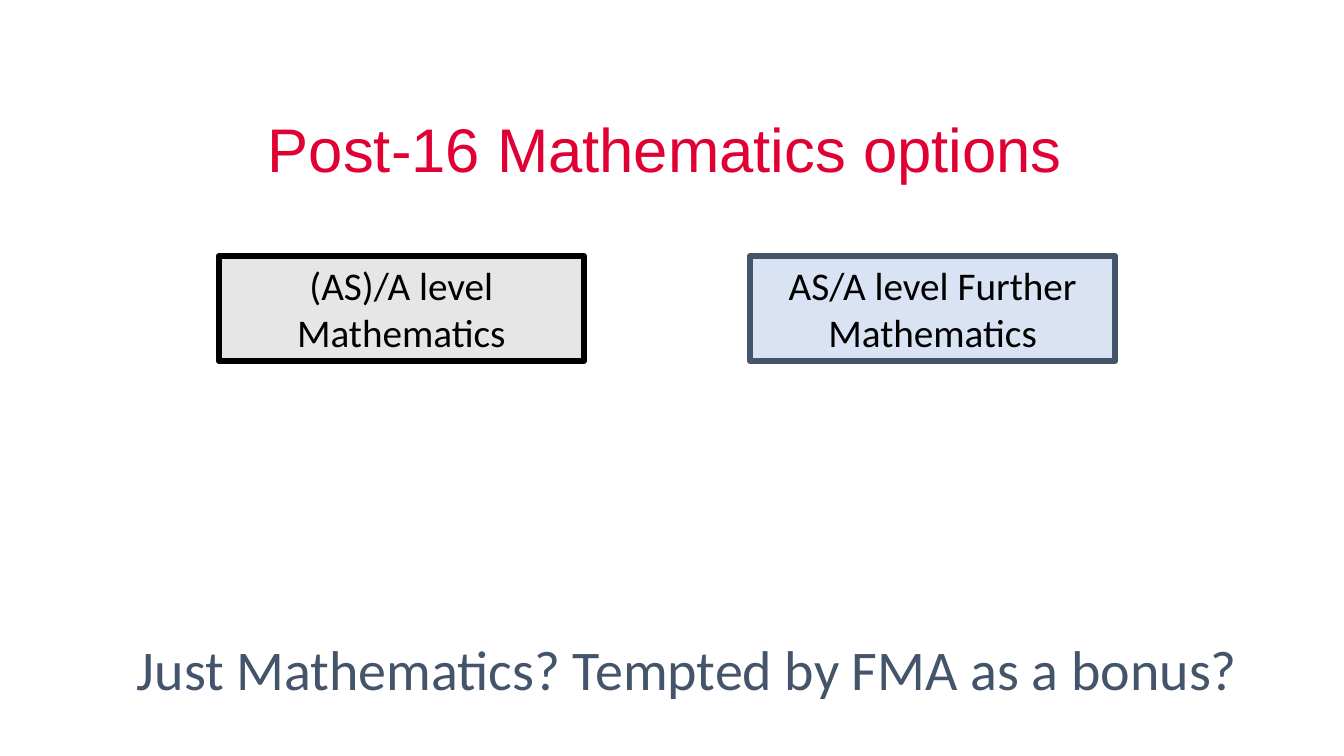
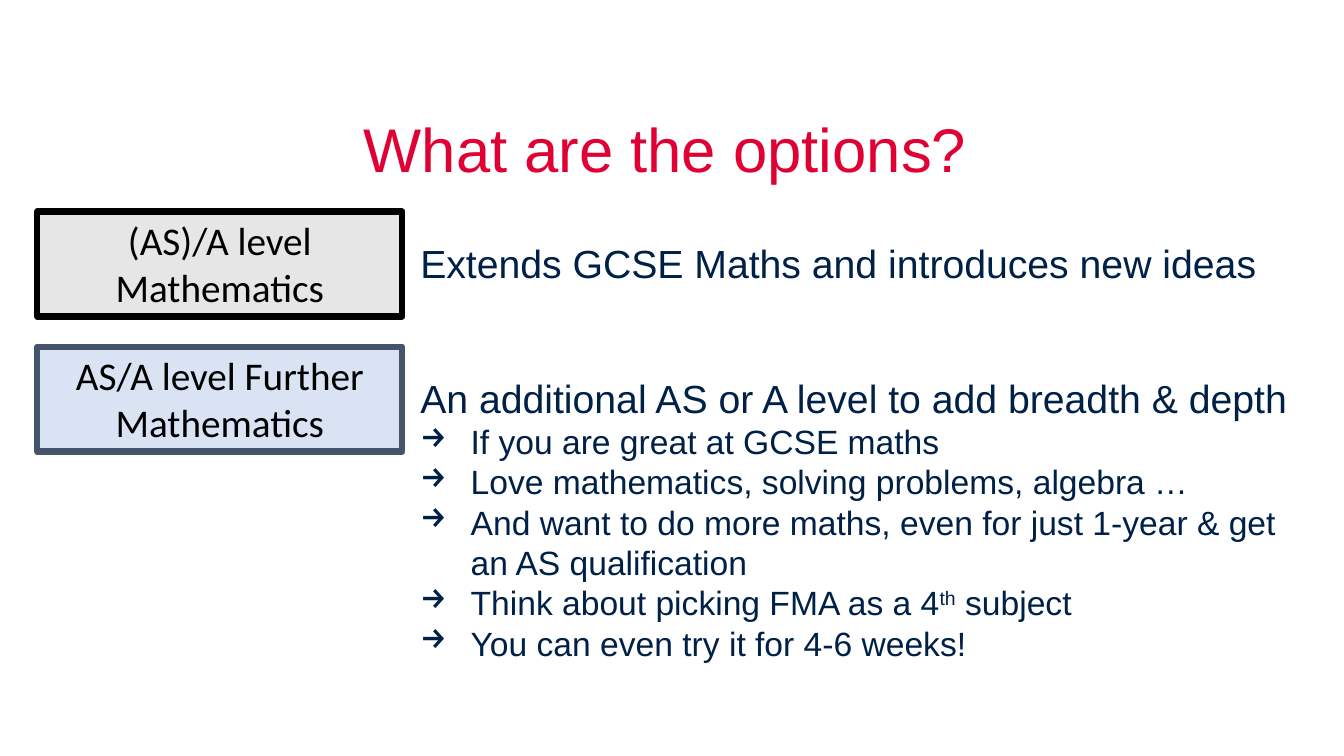
from pptx import Presentation
from pptx.dml.color import RGBColor
from pptx.enum.shapes import MSO_SHAPE
from pptx.enum.text import MSO_ANCHOR, MSO_AUTO_SIZE, PP_ALIGN
from pptx.oxml.ns import qn
from pptx.util import Pt
from lxml import etree

PX = 9144  # EMU per px, 100 px to the inch
RECT = MSO_SHAPE.RECTANGLE
MIDDLE, TOP = MSO_ANCHOR.MIDDLE, MSO_ANCHOR.TOP
LEFT, CENTER = PP_ALIGN.LEFT, PP_ALIGN.CENTER
GROW = MSO_AUTO_SIZE.SHAPE_TO_FIT_TEXT

RED, NAVY, SLATE, BLACK = "E00034", "002147", "44546A", "000000"
GREY, PALE_BLUE = "E6E6E6", "DAE3F3"
BULLET_INDENT = 50
OPTION_W, OPTION_H = 362, 104


def rgb(color):
    return RGBColor.from_string(color)


def write(sp, lines, size=28, font="Arial", color=NAVY, align=LEFT,
          anchor=TOP, spacing=None, bullet=None, bullet_size=24):
    """Write lines into a shape; with a bullet, all lines after the first carry it.
    Text between ^ marks is superscript."""
    tf = sp.text_frame
    tf.word_wrap = True
    tf.vertical_anchor = anchor
    if anchor == TOP:
        tf.auto_size = GROW
    for i, line in enumerate(lines):
        p = tf.paragraphs[0] if i == 0 else tf.add_paragraph()
        p.alignment = align
        p.line_spacing = spacing
        bulleted = bullet and i > 0
        if bulleted:
            pPr = p._p.get_or_add_pPr()
            pPr.set("marL", str(BULLET_INDENT * PX))
            pPr.set("indent", str(-BULLET_INDENT * PX))
            etree.SubElement(pPr, qn("a:buChar")).set("char", bullet)
        for j, part in enumerate(line.split("^")):
            r = p.add_run()
            r.text = part
            r.font.size = Pt(bullet_size if bulleted else size)
            r.font.name = font
            r.font.color.rgb = rgb(color)
            if j % 2:
                r._r.get_or_add_rPr().set("baseline", "30000")


prs = Presentation()
prs.slide_width, prs.slide_height = 1333 * PX, 750 * PX

# Content: title, option box positions, texts as (box, lines, format)
slides = [
    ("Post-16 Mathematics options",
     [(217, 254), (744, 254)],
     [((126, 625, 1137, 77), ["Just Mathematics? Tempted by FMA as a bonus?"],
       dict(size=40, font="Calibri", color=SLATE))]),
    ("What are the options?",
     [(37, 210), (37, 344)],
     [((407, 233, 866, 57), ["Extends GCSE Maths and introduces new ideas"], {}),
      ((407, 366, 914, 300),
       ["An additional AS or A level to add breadth & depth",
        "If you are great at GCSE maths",
        "Love mathematics, solving problems, algebra …",
        "And want to do more maths, even for just 1-year & get an AS qualification",
        "Think about picking FMA as a 4^th^ subject",
        "You can even try it for 4-6 weeks!"],
       dict(bullet="→"))]),
]
options = [
    ("(AS)/A level Mathematics", GREY, BLACK),
    ("AS/A level Further Mathematics", PALE_BLUE, SLATE),
]

for title, positions, texts in slides:
    s = prs.slides.add_slide(prs.slide_layouts[6])

    # Title
    sp = s.shapes.add_textbox(214 * PX, 109 * PX, 892 * PX, 85 * PX)
    write(sp, [title], size=44, color=RED, align=CENTER, anchor=MIDDLE, spacing=0.9)

    # Option boxes
    for (x, y), (label, fill, line) in zip(positions, options):
        sp = s.shapes.add_shape(RECT, x * PX, y * PX, OPTION_W * PX, OPTION_H * PX)
        sp.shadow.inherit = False
        sp.fill.solid()
        sp.fill.fore_color.rgb = rgb(fill)
        sp.line.color.rgb = rgb(line)
        sp.line.width = Pt(4.5)
        write(sp, [label], font="Calibri", color=BLACK, align=CENTER)

    # Texts
    for box, lines, fmt in texts:
        sp = s.shapes.add_textbox(*(v * PX for v in box))
        write(sp, lines, **fmt)

prs.save("out.pptx")
